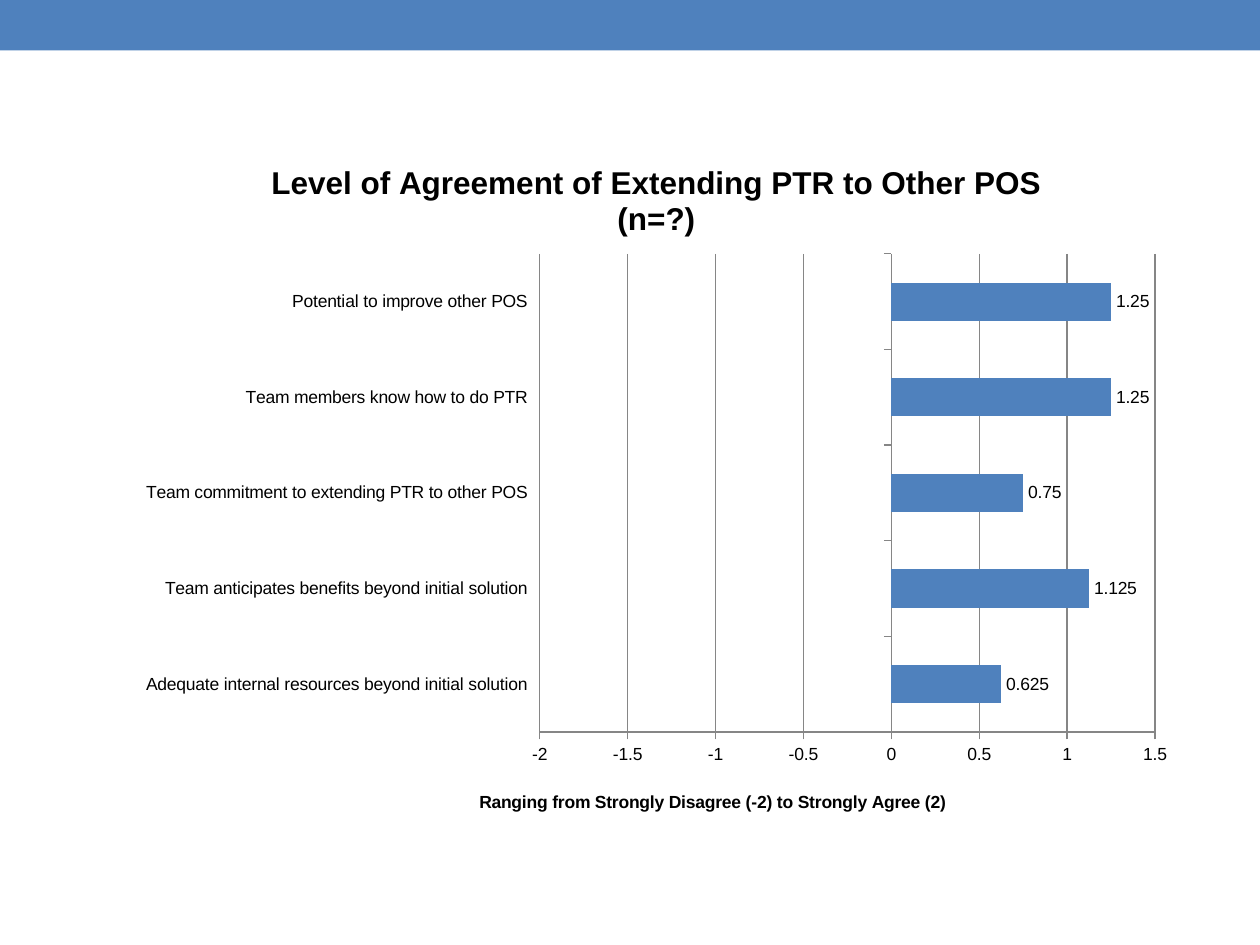
from dataclasses import dataclass

from lxml.etree import SubElement
from pptx import Presentation
from pptx.chart.data import CategoryChartData
from pptx.dml.color import RGBColor
from pptx.enum.chart import XL_CHART_TYPE, XL_LABEL_POSITION, XL_TICK_LABEL_POSITION, XL_TICK_MARK
from pptx.enum.shapes import MSO_SHAPE
from pptx.oxml import parse_xml
from pptx.oxml.ns import nsdecls, qn
from pptx.util import Inches, Pt

AGREEMENT = {
    "Adequate internal resources beyond initial solution": 0.625,
    "Team anticipates benefits beyond initial solution": 1.125,
    "Team commitment to extending PTR to other POS": 0.75,
    "Team members know how to do PTR": 1.25,
    "Potential to improve other POS": 1.25,
}


def color(hex_code):
    return RGBColor.from_string(hex_code)


def place(parent, index, **shares):
    for old in parent.findall(qn("c:layout")):
        parent.remove(old)
    layout = parse_xml(f"<c:layout {nsdecls('c')}><c:manualLayout/></c:layout>")
    manual = layout[0]
    if "w" in shares:
        SubElement(manual, qn("c:layoutTarget")).set("val", "inner")
    for side in ("xMode", "yMode"):
        SubElement(manual, qn(f"c:{side}")).set("val", "edge")
    for side, share in shares.items():
        SubElement(manual, qn(f"c:{side}")).set("val", str(share))
    parent.insert(index, layout)


@dataclass
class SlideBuilder:
    deck: object
    slide: object
    accent: str = "4F81BD"
    ink: str = "000000"
    rule: str = "868686"
    font: str = "Arial"

    def box(self, left, top, width, height):
        across, down = self.deck.slide_width, self.deck.slide_height
        return int(left * across), int(top * down), int(width * across), int(height * down)

    def band(self, *shares):
        band = self.slide.shapes.add_shape(MSO_SHAPE.RECTANGLE, *self.box(*shares))
        band.shadow.inherit = False
        band.fill.solid()
        band.fill.fore_color.rgb = color(self.accent)
        band.line.fill.background()

    def style(self, font, size, bold=False):
        font.name = self.font
        font.size = Pt(size)
        font.bold = bold
        font.color.rgb = color(self.ink)

    def heading(self, frame, text, size):
        frame.text = text
        self.style(frame.paragraphs[0].font, size, True)

    def line(self, target):
        target.format.line.color.rgb = color(self.rule)
        target.format.line.width = Pt(0.75)

    def bar_chart(self, values, title, scale_title, *shares):
        data = CategoryChartData()
        data.categories = list(values)
        data.add_series("Series 1", list(values.values()))
        chart = self.slide.shapes.add_chart(
            XL_CHART_TYPE.BAR_CLUSTERED, *self.box(*shares), data).chart
        self.style(chart.font, 10)
        chart.has_legend = False
        chart.has_title = True
        self.heading(chart.chart_title.text_frame, title, 18)

        plot = chart.plots[0]
        plot.gap_width = 150
        plot.vary_by_categories = False
        bars = plot.series[0]
        bars.format.fill.solid()
        bars.format.fill.fore_color.rgb = color(self.accent)
        labels = bars.data_labels
        labels.show_value = True
        labels.position = XL_LABEL_POSITION.OUTSIDE_END
        self.style(labels.font, 10)

        statements, scale = chart.category_axis, chart.value_axis
        for axis in (statements, scale):
            axis.major_tick_mark = XL_TICK_MARK.OUTSIDE
            axis.minor_tick_mark = XL_TICK_MARK.NONE
            self.line(axis)
        statements.tick_label_position = XL_TICK_LABEL_POSITION.LOW
        scale.minimum_scale, scale.maximum_scale, scale.major_unit = -2, 1.5, 0.5
        scale.has_major_gridlines = True
        self.line(scale.major_gridlines)
        scale.has_title = True
        self.heading(scale.axis_title.text_frame, scale_title, 10)

        plot_area = chart.element.find(".//" + qn("c:plotArea"))
        place(plot_area, 0, x=0.39, y=0.17, w=0.58, h=0.69)
        place(plot_area.find(".//" + qn("c:title")), 1, x=0.33, y=0.94)


def main():
    deck = Presentation()
    deck.slide_width, deck.slide_height = Inches(10), Inches(7.5)
    page = SlideBuilder(deck, deck.slides.add_slide(deck.slide_layouts[6]))
    page.band(0, 0, 1, 0.4 / 7.5)
    page.bar_chart(
        AGREEMENT,
        "Level of Agreement of Extending PTR to Other POS (n=?)",
        "Ranging from Strongly Disagree (-2) to Strongly Agree (2)",
        0.1, 1.08 / 7.5, 0.842, 5.5 / 7.5)
    deck.save("out.pptx")


if __name__ == "__main__":
    main()
